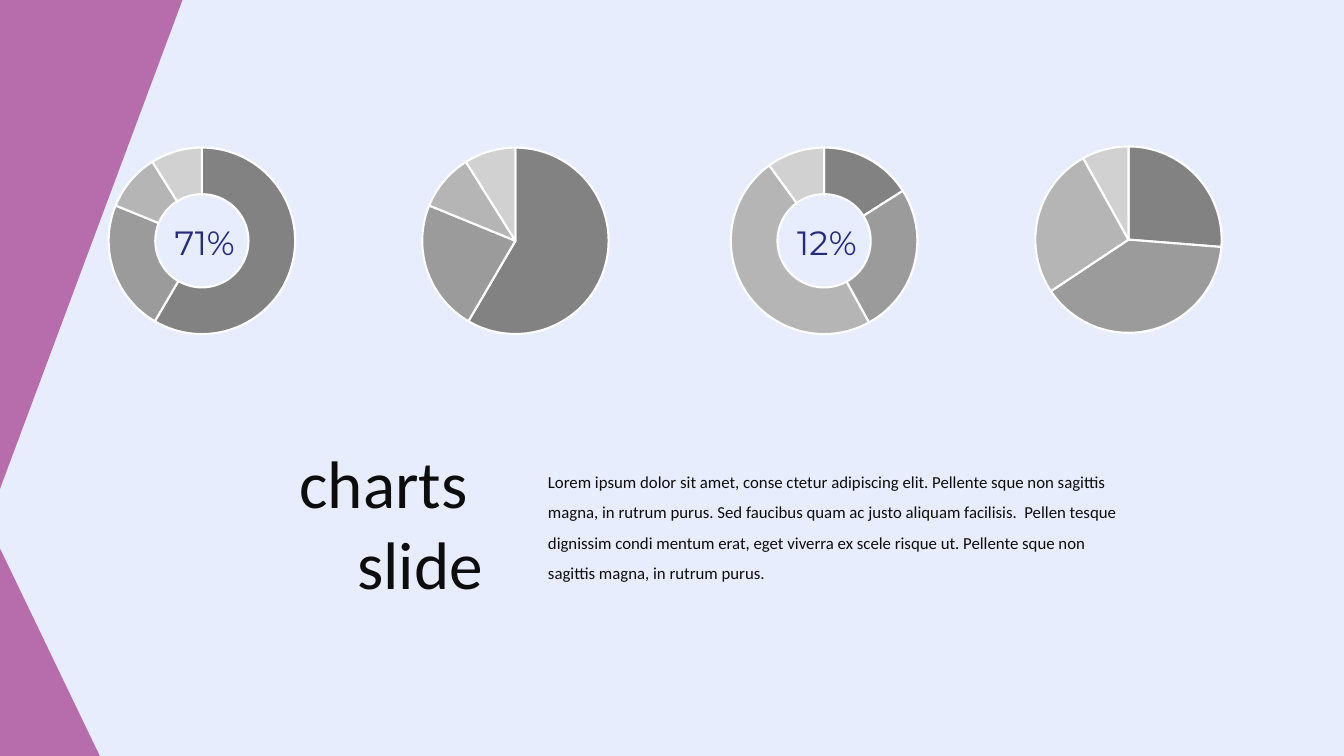
from pptx import Presentation
from pptx import util as u
from pptx.chart import data
from pptx.dml import color
from pptx.enum import chart as kinds, shapes, text
from pptx.oxml import parse_xml
from pptx.oxml.ns import nsdecls, qn

COLORS = {"background": "E7EDFD", "corner": "B76CAB", "ink": "0D0D0D",
          "percent": "262A7C", "border": "FFFFFF", "chart_text": "000000"}
SLICES = {"1": "828282", "2": "9B9B9B", "3": "B5B5B5", "4": "D1D1D1"}
DOUGHNUT, PIE = kinds.XL_CHART_TYPE.DOUGHNUT, kinds.XL_CHART_TYPE.PIE
CHART_HEIGHT = 5.38
DIAMETER = 4.7
CHARTS = [
    (1.57, 3.38, 7.04, DOUGHNUT, (59, 23, 10, 9), "71%"),
    (9.42, 3.38, 7.14, PIE, (59, 23, 10, 9), None),
    (17.25, 3.38, 7.04, DOUGHNUT, (16, 26, 48, 10), "12%"),
    (24.87, 3.35, 7.14, PIE, (26, 39, 26, 8), None),
]
BODY = ("Lorem ipsum dolor sit amet, conse ctetur adipiscing elit. Pellente sque non "
        "sagittis magna, in rutrum purus. Sed faucibus quam ac justo aliquam facilisis.  "
        "Pellen tesque dignissim condi mentum erat, eget viverra ex scele risque ut. "
        "Pellente sque non sagittis magna, in rutrum purus.")


def rgb(value):
    """Turn a hex string into a colour."""
    return color.RGBColor.from_string(value)


def add_corner(slide, box, upper=False):
    """Fill a left corner of the slide with a right triangle."""
    corner = slide.shapes.add_shape(shapes.MSO_SHAPE.RIGHT_TRIANGLE, *map(u.Cm, box))
    corner.shadow.inherit = False
    corner.fill.solid()
    corner.fill.fore_color.rgb = rgb(COLORS["corner"])
    corner.line.fill.background()
    if upper:
        corner.rotation = 180
        corner._element.spPr.xfrm.set("flipH", "1")


def add_words(slide, box, lines, size, font, ink, align, spacing=None):
    """Write lines of text in one style, one paragraph each."""
    frame = slide.shapes.add_textbox(*map(u.Cm, box)).text_frame
    frame.word_wrap = True
    frame.text = "\n".join(lines)
    for paragraph in frame.paragraphs:
        paragraph.alignment = align
        paragraph.line_spacing = spacing
        for run in paragraph.runs:
            run.font.size = u.Pt(size)
            run.font.name = font
            run.font.color.rgb = rgb(ink)


def center_plot(chart, width, height):
    """Centre a plot of the set diameter in its chart."""
    across, down = DIAMETER / width, DIAMETER / height
    sizes = {"x": (1 - across) / 2, "y": (1 - down) / 2, "w": across, "h": down}
    parts = "".join(f'<c:{key} val="{value:.3f}"/>' for key, value in sizes.items())
    layout = parse_xml(
        f'<c:layout {nsdecls("c")}><c:manualLayout><c:layoutTarget val="inner"/>'
        f'<c:xMode val="edge"/><c:yMode val="edge"/>{parts}</c:manualLayout></c:layout>')
    plot_area = chart._chartSpace.chart.plotArea
    for automatic in plot_area.findall(qn("c:layout")):
        plot_area.remove(automatic)
    plot_area.insert(0, layout)


def add_share_chart(slide, box, kind, shares, percent):
    """Draw a pie or doughnut in the box, with its percentage in the middle."""
    left, top, width, height = box
    shares_data = data.CategoryChartData()
    shares_data.categories = list(SLICES)
    shares_data.add_series("Series 1", shares)
    chart = slide.shapes.add_chart(kind, *map(u.Cm, box), shares_data).chart
    chart.has_legend = False
    chart.has_title = False
    chart.font.size = u.Pt(10)
    chart.font.name = "Calibri"
    chart.font.color.rgb = rgb(COLORS["chart_text"])
    plot = chart.plots[0]
    plot.vary_by_categories = True
    plot.has_data_labels = False
    for index, shade in enumerate(SLICES.values()):
        piece = plot.series[0].points[index].format
        piece.fill.solid()
        piece.fill.fore_color.rgb = rgb(shade)
        piece.line.color.rgb = rgb(COLORS["border"])
        piece.line.width = u.Pt(1.5)
    center_plot(chart, width, height)
    if kind == DOUGHNUT:
        plot._element.find(qn("c:holeSize")).set("val", "75")
    if percent:
        label_width, label_height = 2.64, 1.27
        label = (left + (width - label_width) / 2 + 0.07,
                 top + (height - label_height) / 2 + 0.03, label_width, label_height)
        add_words(slide, label, [percent], 24, "Montserrat", COLORS["percent"],
                  text.PP_ALIGN.CENTER)


def add_caption(slide, left, top):
    """Place the heading with the description to its right."""
    add_words(slide, (left, top, 7.04, 4.37), ["charts ", "slide"], 48, "Calibri",
              COLORS["ink"], text.PP_ALIGN.RIGHT)
    add_words(slide, (left + 8.18, top + 0.51, 14.91, 3.33), [BODY], 12, "Calibri",
              COLORS["ink"], text.PP_ALIGN.LEFT, 1.5)


def main():
    """Build the charts slide and save it."""
    deck = Presentation()
    deck.slide_width, deck.slide_height = u.Cm(33.87), u.Cm(19.05)
    slide = deck.slides.add_slide(deck.slide_layouts[6])
    slide.background.fill.solid()
    slide.background.fill.fore_color.rgb = rgb(COLORS["background"])
    add_corner(slide, (0, 13.82, 2.54, 5.28))
    add_corner(slide, (0, 0, 4.6, 12.32), upper=True)
    add_caption(slide, 5.38, 11)
    for left, top, width, kind, shares, percent in CHARTS:
        add_share_chart(slide, (left, top, width, CHART_HEIGHT), kind, shares, percent)
    deck.save("out.pptx")


if __name__ == "__main__":
    main()
